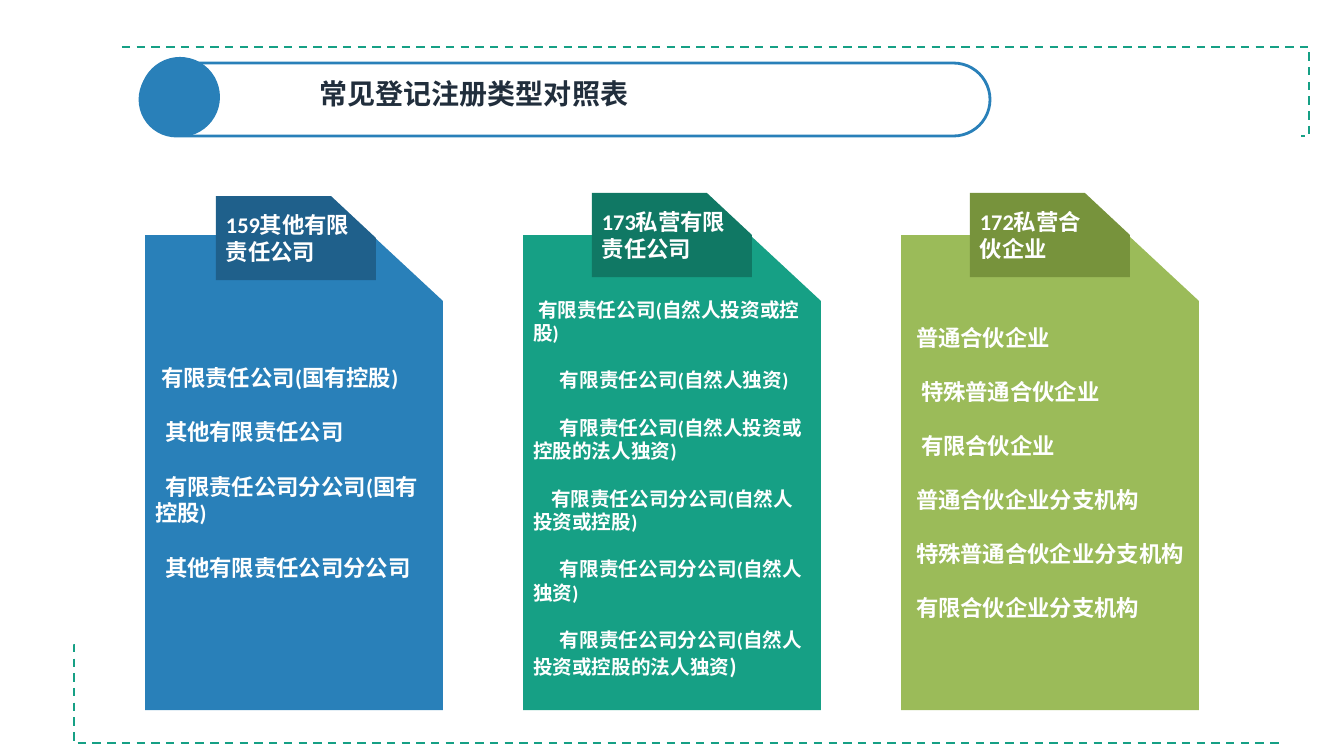
import pptx
import pptx.dml.color
import pptx.enum.dml
import pptx.enum.shapes
import pptx.enum.text
import pptx.oxml.ns
import pptx.util
import lxml.etree

COLORS = {
    "blue": "2980B9", "dark_blue": "1F608B",
    "teal": "16A085", "dark_teal": "107864",
    "green": "9BBB59", "dark_green": "77933C",
    "ink": "212E3C", "white": "FFFFFF",
}
CARD_LEFT, CARD_TOP, CARD_PITCH = 145, 235, 378
CARD_WIDTH, CARD_HEIGHT = 298, 475
INSET = 10
ALIGN = pptx.enum.text.PP_ALIGN
ANCHOR = pptx.enum.text.MSO_ANCHOR

CARDS = [
    {"fill": "blue", "tab_fill": "dark_blue", "tab": (71, -39), "heading": "159其他有限责任公司",
     "size": 16, "gap": 19.5, "types": [
         (6, "有限责任公司(国有控股)"),
         (10, "其他有限责任公司"),
         (10, "有限责任公司分公司(国有控股)"),
         (10, "其他有限责任公司分公司")]},
    {"fill": "teal", "tab_fill": "dark_teal", "tab": (69, -42), "heading": "173私营有限责任公司",
     "size": 14, "gap": 17, "top_inset": 36, "types": [
         (5, "有限责任公司(自然人投资或控股)"),
         (27, "有限责任公司(自然人独资)"),
         (27, "有限责任公司(自然人投资或控股的法人独资)"),
         (18, "有限责任公司分公司(自然人投资或控股)"),
         (27, "有限责任公司分公司(自然人独资)"),
         (27, "有限责任公司分公司(自然人投资或控股的法人独资", (")", 16))]},
    {"fill": "green", "tab_fill": "dark_green", "tab": (69, -42), "heading": "172私营合伙企业",
     "heading_right": 47, "size": 16, "gap": 19.5, "types": [
         (5, "普通合伙企业"),
         (10, "特殊普通合伙企业"),
         (10, "有限合伙企业"),
         (5, "普通合伙企业分支机构"),
         (5, "特殊普通合伙企业分支机构"),
         (5, "有限合伙企业分支机构")]},
]


def px(length):
    """Turn pixels into EMU."""
    return pptx.util.Emu(round(length * 914400 / 100.8))


def rgb(name):
    """Look up a named colour."""
    return pptx.dml.color.RGBColor.from_string(COLORS[name])


def write(shape, paragraphs, size, color="white", align=ALIGN.LEFT, anchor=ANCHOR.MIDDLE,
          wrap=True, gap=0, spacing=None, top=5, right=INSET):
    """Write paragraphs given as an indent followed by plain or (text, size) runs."""
    frame = shape.text_frame
    frame.auto_size = pptx.enum.text.MSO_AUTO_SIZE.NONE
    frame.word_wrap, frame.vertical_anchor = wrap, anchor
    frame.margin_left, frame.margin_right = px(INSET), px(right)
    frame.margin_top, frame.margin_bottom = px(top), px(5)
    for index, (indent, *runs) in enumerate(paragraphs):
        paragraph = frame.add_paragraph() if index else frame.paragraphs[0]
        paragraph.alignment = align
        paragraph.space_before = pptx.util.Pt(gap if index else 0)
        if spacing:
            paragraph.line_spacing = spacing
        properties = paragraph._p.get_or_add_pPr()
        properties.set("marL", "0")
        properties.set("indent", str(px(indent)))
        for piece in runs:
            text, points = piece if isinstance(piece, tuple) else (piece, size)
            run = paragraph.add_run()
            run.text = text
            run.font.name, run.font.bold = "Calibri", True
            run.font.size = pptx.util.Pt(points)
            run.font.color.rgb = rgb(color)


def add_clipped_panel(slide, left, top, width, height, cut_x, cut_y, fill):
    """Draw a panel whose top right corner is cut off."""
    builder = slide.shapes.build_freeform(left, top, scale=px(1000) / 1000)
    builder.add_line_segments([
        (left + cut_x, top), (left + width, top + cut_y),
        (left + width, top + height), (left, top + height)], close=True)
    panel = builder.convert_to_shape()
    panel.shadow.inherit = False
    panel.fill.solid()
    panel.fill.fore_color.rgb = rgb(fill)
    panel.line.fill.background()
    return panel


def add_card(slide, left, top, width, height, card):
    """Place one registration card with its heading tab."""
    body = add_clipped_panel(slide, left, top, width, height, 227, 66, card["fill"])
    write(body, card["types"], card["size"], gap=card["gap"], top=card.get("top_inset", 5))
    tab_x, tab_y = card["tab"]
    tab = add_clipped_panel(slide, left + tab_x, top + tab_y, 160, 84, 115, 42, card["tab_fill"])
    write(tab, [(0, card["heading"])], 16, right=card.get("heading_right", INSET))


def add_dashed_corner(slide, left, top, width, height, bend):
    """Draw a dashed bent line that turns at the given share of its width."""
    corner = slide.shapes.add_connector(
        pptx.enum.shapes.MSO_CONNECTOR.ELBOW, px(left), px(top), px(left + width), px(top + height))
    corner.line.color.rgb = rgb("teal")
    corner.line.width = pptx.util.Pt(1.5)
    corner.line.dash_style = pptx.enum.dml.MSO_LINE.DASH
    qn = pptx.oxml.ns.qn
    properties = corner._element.spPr
    lxml.etree.SubElement(properties, qn("a:effectLst"))
    adjustments = properties.find(qn("a:prstGeom")).find(qn("a:avLst"))
    lxml.etree.SubElement(adjustments, qn("a:gd"), name="adj1", fmla=f"val {round(bend * 100000)}")


def add_header(slide, left, top, width, height):
    """Place the pill, its round badge and the title."""
    kinds = pptx.enum.shapes.MSO_SHAPE
    badge = slide.shapes.add_shape(kinds.OVAL, px(left), px(top), px(80), px(80))
    badge.fill.solid()
    badge.fill.fore_color.rgb = rgb("blue")
    badge.line.fill.background()
    pill = slide.shapes.add_shape(
        kinds.ROUNDED_RECTANGLE, px(left), px(top + 6), px(width), px(height - 6))
    pill.adjustments[0] = 0.5
    pill.fill.background()
    pill.line.color.rgb = rgb("blue")
    pill.line.width = pptx.util.Pt(2)
    badge.shadow.inherit = pill.shadow.inherit = False
    title = slide.shapes.title
    title.left, title.top = px(left + 168), px(top + 18)
    title.width, title.height = px(332), px(40)
    write(title, [(0, "常见登记注册类型对照表")], 20, color="ink", align=ALIGN.CENTER,
          anchor=ANCHOR.TOP, wrap=False, spacing=0.9)


def main():
    """Build the slide and save it."""
    deck = pptx.Presentation()
    deck.slide_width, deck.slide_height = px(1344), px(756)
    slide = deck.slides.add_slide(deck.slide_layouts.get_by_name("Title Only"))
    add_dashed_corner(slide, 122, 47, 1179, 89, 1.007)
    add_dashed_corner(slide, 75, 645, 1207, 98, -0.001)
    add_header(slide, 140, 57, 850, 79)
    for index, card in enumerate(CARDS):
        add_card(slide, CARD_LEFT + index * CARD_PITCH, CARD_TOP, CARD_WIDTH, CARD_HEIGHT, card)
    deck.save("out.pptx")


if __name__ == "__main__":
    main()
